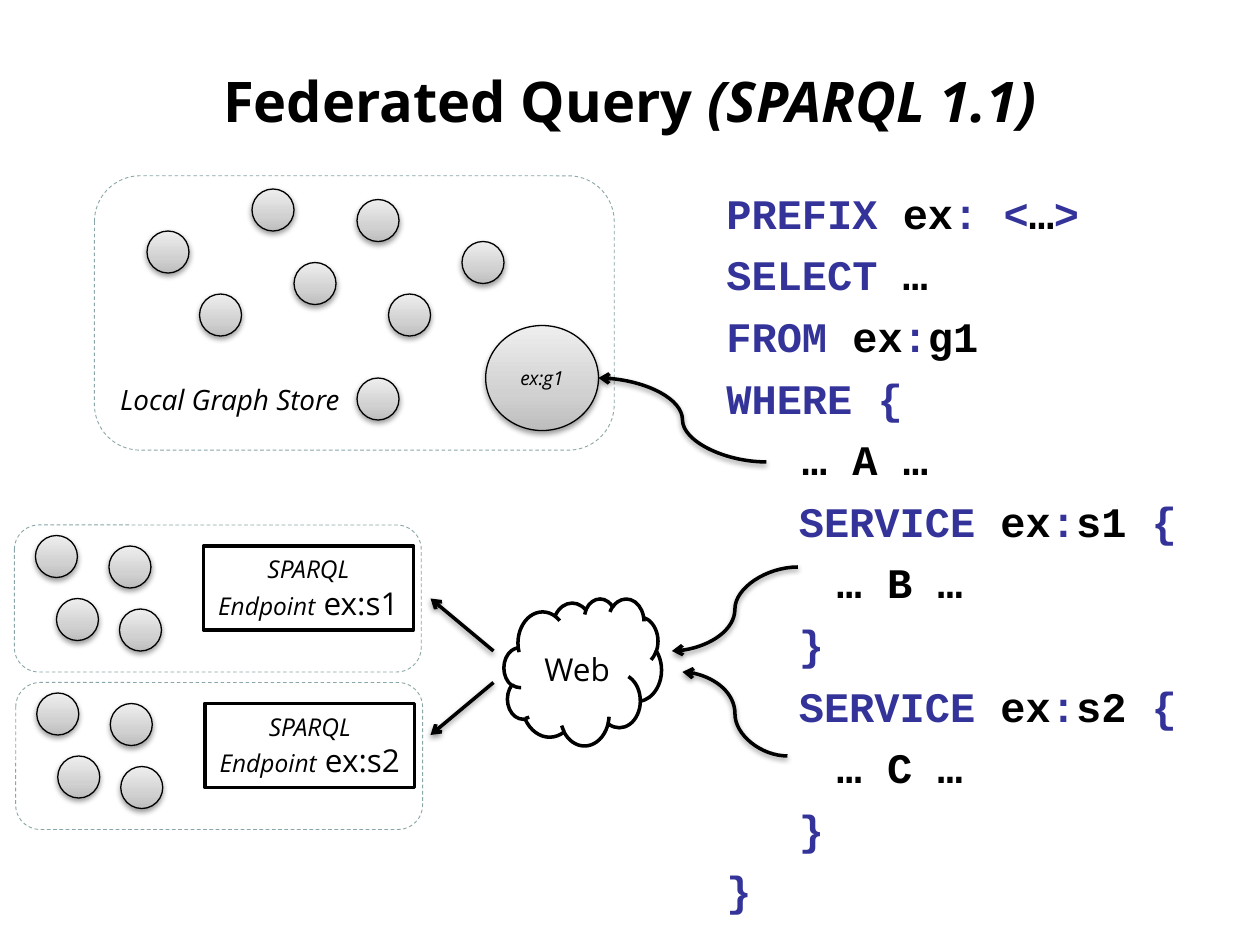
"""Build the Federated Query slide: graph stores, endpoints, the web and a query."""
from copy import deepcopy
from typing import NamedTuple

from lxml.etree import SubElement
from pptx import Presentation
from pptx.dml.color import RGBColor as Rgb
from pptx.enum.dml import MSO_LINE as Dash
from pptx.enum.shapes import MSO_CONNECTOR as Conn, MSO_SHAPE as Kind
from pptx.enum.text import MSO_ANCHOR as Anchor, PP_ALIGN as Align
from pptx.oxml import parse_xml
from pptx.oxml.ns import nsdecls, qn
from pptx.util import Pt

PX = 9525
SANS, MONO = "Open Sans", "Courier New"
HUES = {"ink": "000000", "paper": "FFFFFF", "key": "333399", "edge": "8AA6A8",
        "low": "BDBDBD", "mid": "D1D1D1", "high": "EEEEEE"}
SHADE = (f'<a:effectLst {nsdecls("a")}><a:outerShdw blurRad="40000" dist="20000" '
         'dir="5400000" rotWithShape="0"><a:srgbClr val="000000">'
         '<a:alpha val="38000"/></a:srgbClr></a:outerShdw></a:effectLst>')


class Box(NamedTuple):
    x: int
    y: int
    w: int
    h: int


class Link(NamedTuple):
    kind: Conn
    x1: int
    y1: int
    x2: int
    y2: int


class Site(NamedTuple):
    x: int
    y: int
    name: str


class Part(NamedTuple):
    text: str
    size: int
    italic: bool = False


STORE = Box(72, 134, 396, 209)
LOCAL = [(192, 144), (272, 152), (224, 200), (296, 224),
         (152, 224), (272, 288), (352, 184), (112, 176)]
SITES = [Site(11, 400, "ex:s1"), Site(12, 520, "ex:s2")]
NODES = [(16, 8), (72, 16), (32, 56), (80, 64)]
LINKS = [
    Link(Conn.CURVE, 584, 352, 456, 288),
    Link(Conn.CURVE, 608, 432, 512, 496),
    Link(Conn.CURVE, 600, 576, 520, 512),
    Link(Conn.STRAIGHT, 376, 496, 328, 456),
    Link(Conn.STRAIGHT, 376, 520, 328, 560),
]
QUERY = [
    "PREFIX |ex|: <|…|>",
    "SELECT| …",
    "FROM |ex|:|g1",
    "WHERE {",
    "|   … A …",
    "\t SERVICE |ex|:|s1 |{",
    "|\t\t… B …",
    "\t }",
    "\t SERVICE |ex|:|s2 |{",
    "|\t\t… C …",
    "\t }",
    "}",
]


def hue(name: str) -> Rgb:
    return Rgb.from_string(HUES[name])


def emu(*dims: int) -> list[int]:
    return [dim * PX for dim in dims]


def style(run, size: int, font: str = SANS, tint: str = "ink",
          bold: bool = False, italic: bool = False) -> None:
    face = run.font
    face.name, face.size = font, Pt(size)
    face.bold, face.italic = bold, italic
    face.color.rgb = hue(tint)


def write(frame, parts: list[Part], align: Align = Align.CENTER, bold: bool = False) -> None:
    frame.word_wrap = True
    para = frame.paragraphs[0]
    para.alignment = align
    for part in parts:
        run = para.add_run()
        run.text = part.text
        style(run, part.size, bold=bold, italic=part.italic)


def add_box(slide, kind: Kind, box: Box, width: float = 2, edge: str = "ink"):
    shape = slide.shapes.add_shape(kind, *emu(*box))
    shape.shadow.inherit = False
    shape.fill.solid()
    shape.fill.fore_color.rgb = hue("paper")
    shape.line.color.rgb = hue(edge)
    shape.line.width = Pt(width)
    return shape


def add_panel(slide, box: Box):
    shape = add_box(slide, Kind.ROUNDED_RECTANGLE, box, 0.5, "edge")
    shape.fill.background()
    shape.line.dash_style = Dash.DASH
    return shape


def add_shade(shape) -> None:
    props = shape._element.spPr
    for old in props.findall(qn("a:effectLst")):
        props.remove(old)
    props.append(parse_xml(SHADE))


def add_node(slide, box: Box):
    shape = add_box(slide, Kind.OVAL, box, 0.75)
    fill = shape.fill
    fill.gradient()
    fill.gradient_angle = 90
    stops = shape._element.spPr.find(".//" + qn("a:gsLst"))
    stops.append(deepcopy(stops[0]))
    for stop, (pos, name) in zip(fill.gradient_stops, [(0, "low"), (0.35, "mid"), (1, "high")]):
        stop.position = pos
        stop.color.rgb = hue(name)
    add_shade(shape)
    return shape


def add_site(slide, site: Site) -> None:
    add_panel(slide, Box(site.x, site.y, 310, 112))
    for dx, dy in NODES:
        add_node(slide, Box(site.x + dx, site.y + dy, 32, 32))
    card = add_box(slide, Kind.RECTANGLE, Box(site.x + 144, site.y + 16, 160, 64))
    write(card.text_frame, [Part("SPARQL Endpoint", 14, True), Part(f" {site.name}", 18)])


def add_link(slide, link: Link) -> None:
    line = slide.shapes.add_connector(link.kind, *emu(*link[1:]))
    line.line.color.rgb = hue("ink")
    line.line.width = Pt(2)
    SubElement(line.line._get_or_add_ln(), qn("a:tailEnd"), type="arrow")
    add_shade(line)


def add_query(slide, box: Box) -> None:
    frame = slide.shapes.add_textbox(*emu(*box)).text_frame
    frame.word_wrap = True
    frame.vertical_anchor = Anchor.MIDDLE
    for row, code in enumerate(QUERY):
        para = frame.add_paragraph() if row else frame.paragraphs[0]
        props = para._p.get_or_add_pPr()
        props.set("marL", str(36 * PX))
        props.set("indent", str(-36 * PX))
        para.space_before = Pt(6.4 if row else 0)
        for turn, text in enumerate(code.split("|")):
            if text:
                run = para.add_run()
                run.text = text
                style(run, 24, MONO, "ink" if turn % 2 else "key", bold=True)


def main() -> None:
    deck = Presentation()
    deck.slide_width, deck.slide_height = emu(960, 720)
    slide = deck.slides.add_slide(deck.slide_layouts[5])
    title = slide.shapes.title
    title.left, title.top, title.width, title.height = emu(48, 16, 864, 120)
    title.text_frame.vertical_anchor = Anchor.MIDDLE
    write(title.text_frame, [Part("Federated Query ", 32), Part("(SPARQL 1.1)", 32, True)],
          bold=True)
    add_query(slide, Box(544, 132, 376, 576))

    store = add_panel(slide, STORE).text_frame
    store.vertical_anchor = Anchor.BOTTOM
    store.margin_bottom = 16 * PX
    write(store, [Part("Local Graph Store", 16, True)], Align.LEFT)
    for x, y in LOCAL:
        add_node(slide, Box(x, y, 32, 32))
    graph = add_node(slide, Box(370, 248, 86, 80)).text_frame
    graph.margin_left = graph.margin_right = 0
    write(graph, [Part("ex:g1", 11, True)])

    for site in SITES:
        add_site(slide, site)
    cloud = add_box(slide, Kind.CLOUD, Box(384, 456, 120, 112))
    write(cloud.text_frame, [Part("Web", 18)])
    for link in LINKS:
        add_link(slide, link)
    deck.save("out.pptx")


if __name__ == "__main__":
    main()
